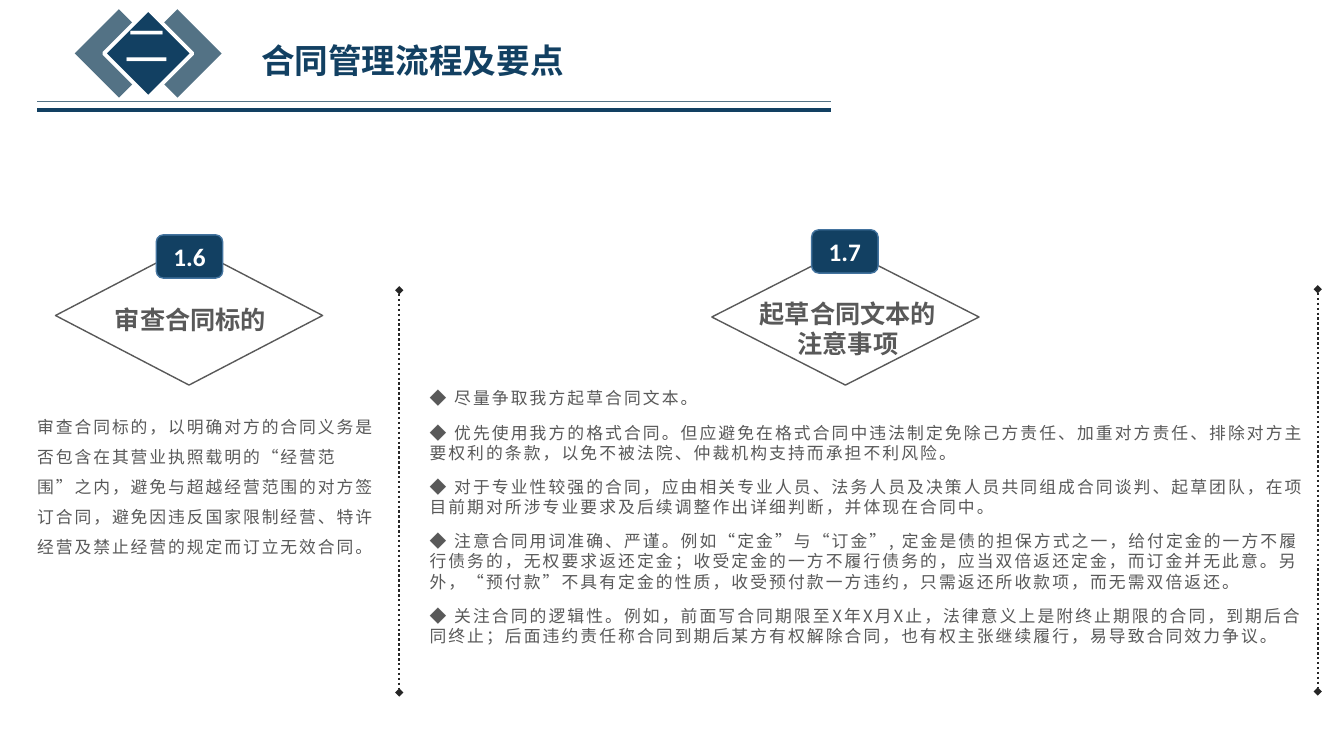
from dataclasses import dataclass

from lxml import etree
from pptx import Presentation
from pptx.dml.color import RGBColor
from pptx.enum.dml import MSO_LINE
from pptx.enum.shapes import MSO_CONNECTOR, MSO_SHAPE
from pptx.enum.text import MSO_ANCHOR, MSO_AUTO_SIZE, PP_ALIGN
from pptx.oxml.ns import qn
from pptx.util import Pt

PX = 9144
LEFT, CENTER = PP_ALIGN.LEFT, PP_ALIGN.CENTER
TOP, MIDDLE = MSO_ANCHOR.TOP, MSO_ANCHOR.MIDDLE
DIAMOND, ROUNDED = MSO_SHAPE.DIAMOND, MSO_SHAPE.ROUNDED_RECTANGLE
STRAIGHT, DOTTED = MSO_CONNECTOR.STRAIGHT, MSO_LINE.ROUND_DOT
GROW = MSO_AUTO_SIZE.SHAPE_TO_FIT_TEXT
CJK = "Noto Sans CJK SC"
COLORS = {"navy": "124062", "slate": "537285", "edge": "43739E",
          "gray": "595959", "ink": "262626", "white": "FFFFFF"}


@dataclass(frozen=True)
class Box:
    left: int
    top: int
    width: int
    height: int

    def emu(self) -> list[int]:
        return [v * PX for v in (self.left, self.top, self.width, self.height)]


@dataclass(frozen=True)
class Style:
    size: int
    color: str = "gray"
    font: str = CJK
    bold: bool = False
    tracking: int = 0
    align: PP_ALIGN = LEFT
    line_spacing: float = 1.0
    gap: int = 0


@dataclass(frozen=True)
class Topic:
    number: str
    heading: str
    badge: Box
    outline: Box
    caption: Box


@dataclass(frozen=True)
class Rule:
    start: tuple[int, int]
    end: tuple[int, int]
    color: str
    weight: float
    dotted: bool = False


TITLE = Style(24, "navy", "Montserrat", bold=True)
NUMERAL = Style(32, "white", "Roboto Condensed")
BADGE = Style(18, "white", "Calibri", bold=True, align=CENTER)
HEADING = Style(18, bold=True, align=CENTER)
REVIEW = Style(12, tracking=140, line_spacing=1.5)
DRAFTING = Style(12, tracking=150, gap=10)

RULES = [
    Rule((1307, 287), (1307, 686), "ink", 1.75, True),
    Rule((396, 288), (396, 687), "ink", 1.75, True),
    Rule((824, 101), (37, 101), "slate", 1),
    Rule((824, 109), (37, 109), "navy", 3),
]
TOPICS = [
    Topic("1.6", "审查合同标的", Box(155, 233, 66, 43),
          Box(55, 244, 265, 138), Box(82, 297, 214, 33)),
    Topic("1.7", "起草合同文本的注意事项", Box(805, 228, 66, 43),
          Box(706, 247, 265, 135), Box(734, 291, 214, 57)),
]
EMBLEM = [(145, "slate", None), (87, "slate", None), (116, "navy", "white")]
REVIEW_TEXT = (
    "审查合同标的，以明确对方的合同义务是否包含在其营业执照载明的“经营范围”之内，"
    "避免与超越经营范围的对方签订合同，避免因违反国家限制经营、特许经营及禁止经营的规定而订立无效合同。"
)
DRAFTING_POINTS = [
    "◆ 尽量争取我方起草合同文本。",
    "◆ 优先使用我方的格式合同。但应避免在格式合同中违法制定免除己方责任、加重对方责任、"
    "排除对方主要权利的条款，以免不被法院、仲裁机构支持而承担不利风险。",
    "◆ 对于专业性较强的合同，应由相关专业人员、法务人员及决策人员共同组成合同谈判、起草团队，"
    "在项目前期对所涉专业要求及后续调整作出详细判断，并体现在合同中。",
    "◆ 注意合同用词准确、严谨。例如“定金”与“订金”, 定金是债的担保方式之一，"
    "给付定金的一方不履行债务的，无权要求返还定金；收受定金的一方不履行债务的，"
    "应当双倍返还定金，而订金并无此意。另外，“预付款”不具有定金的性质，"
    "收受预付款一方违约，只需返还所收款项，而无需双倍返还。",
    "◆ 关注合同的逻辑性。例如，前面写合同期限至X年X月X止，法律意义上是附终止期限的合同，"
    "到期后合同终止；后面违约责任称合同到期后某方有权解除合同，也有权主张继续履行，易导致合同效力争议。",
]


def rgb(name: str) -> RGBColor:
    return RGBColor.from_string(COLORS[name])


def write(frame, text: str, style: Style, anchor=TOP, wrap: bool = True) -> None:
    frame.text = text
    frame.word_wrap = wrap
    frame.vertical_anchor = anchor
    for index, paragraph in enumerate(frame.paragraphs):
        paragraph.alignment = style.align
        paragraph.line_spacing = style.line_spacing
        paragraph.space_before = Pt(style.gap if index else 0)
        for run in paragraph.runs:
            run.font.size = Pt(style.size)
            run.font.bold = style.bold
            run.font.name = style.font
            run.font.color.rgb = rgb(style.color)
            properties = run.font._element
            properties.set("spc", str(style.tracking))
            east_asian = etree.Element(qn("a:ea"), typeface=CJK)
            properties.find(qn("a:latin")).addnext(east_asian)


def add_text(shapes, box: Box, text: str, style: Style, wrap: bool = True) -> None:
    frame = shapes.add_textbox(*box.emu()).text_frame
    write(frame, text, style, wrap=wrap)
    frame.auto_size = GROW


def fill_placeholder(placeholder, box: Box, text: str, style: Style, wrap: bool) -> None:
    placeholder.left, placeholder.top, placeholder.width, placeholder.height = box.emu()
    write(placeholder.text_frame, text, style, wrap=wrap)
    placeholder.text_frame.auto_size = GROW
    for paragraph in placeholder.text_frame.paragraphs:
        properties = paragraph._p.get_or_add_pPr()
        properties.set("marL", "0")
        properties.set("indent", "0")
        etree.SubElement(properties, qn("a:buNone"))


def add_figure(shapes, kind, box: Box, fill: str | None, line: str | None, weight: float = 1):
    figure = shapes.add_shape(kind, *box.emu())
    figure.shadow.inherit = False
    if fill:
        figure.fill.solid()
        figure.fill.fore_color.rgb = rgb(fill)
    else:
        figure.fill.background()
    if line:
        figure.line.color.rgb = rgb(line)
        figure.line.width = Pt(weight)
    else:
        figure.line.fill.background()
    return figure


def add_rule(shapes, rule: Rule) -> None:
    ends = [v * PX for v in (*rule.start, *rule.end)]
    connector = shapes.add_connector(STRAIGHT, *ends)
    connector.line.color.rgb = rgb(rule.color)
    connector.line.width = Pt(rule.weight)
    if rule.dotted:
        connector.line.dash_style = DOTTED
        for end in ("a:headEnd", "a:tailEnd"):
            etree.SubElement(connector.line._ln, qn(end), type="diamond")
    etree.SubElement(connector._element.spPr, qn("a:effectLst"))


def add_topic(shapes, topic: Topic) -> None:
    group = shapes.add_group_shape()
    add_figure(group.shapes, DIAMOND, topic.outline, None, "gray")
    add_text(group.shapes, topic.caption, topic.heading, HEADING)
    badge = add_figure(shapes, ROUNDED, topic.badge, "navy", "edge")
    write(badge.text_frame, topic.number, BADGE, MIDDLE)


def add_emblem(shapes) -> None:
    for left, fill, line in EMBLEM:
        tile = add_figure(shapes, ROUNDED, Box(left, 22, 62, 62), fill, line, 2.75)
        tile.adjustments[0] = 0
        tile.rotation = 45
    add_text(shapes, Box(114, 13, 65, 64), "二", NUMERAL, wrap=False)


def main() -> None:
    deck = Presentation()
    deck.slide_width, deck.slide_height = 1333 * PX, 750 * PX
    slide = deck.slides.add_slide(deck.slide_layouts[1])
    shapes = slide.shapes
    fill_placeholder(shapes.title, Box(249, 35, 323, 50), "合同管理流程及要点", TITLE, False)
    fill_placeholder(slide.placeholders[1], Box(416, 380, 892, 268),
                     "\n".join(DRAFTING_POINTS), DRAFTING, True)
    for rule in RULES:
        add_rule(shapes, rule)
    for topic in TOPICS:
        add_topic(shapes, topic)
    add_emblem(shapes)
    add_text(shapes, Box(27, 398, 365, 158), REVIEW_TEXT, REVIEW)
    deck.save("out.pptx")


if __name__ == "__main__":
    main()
